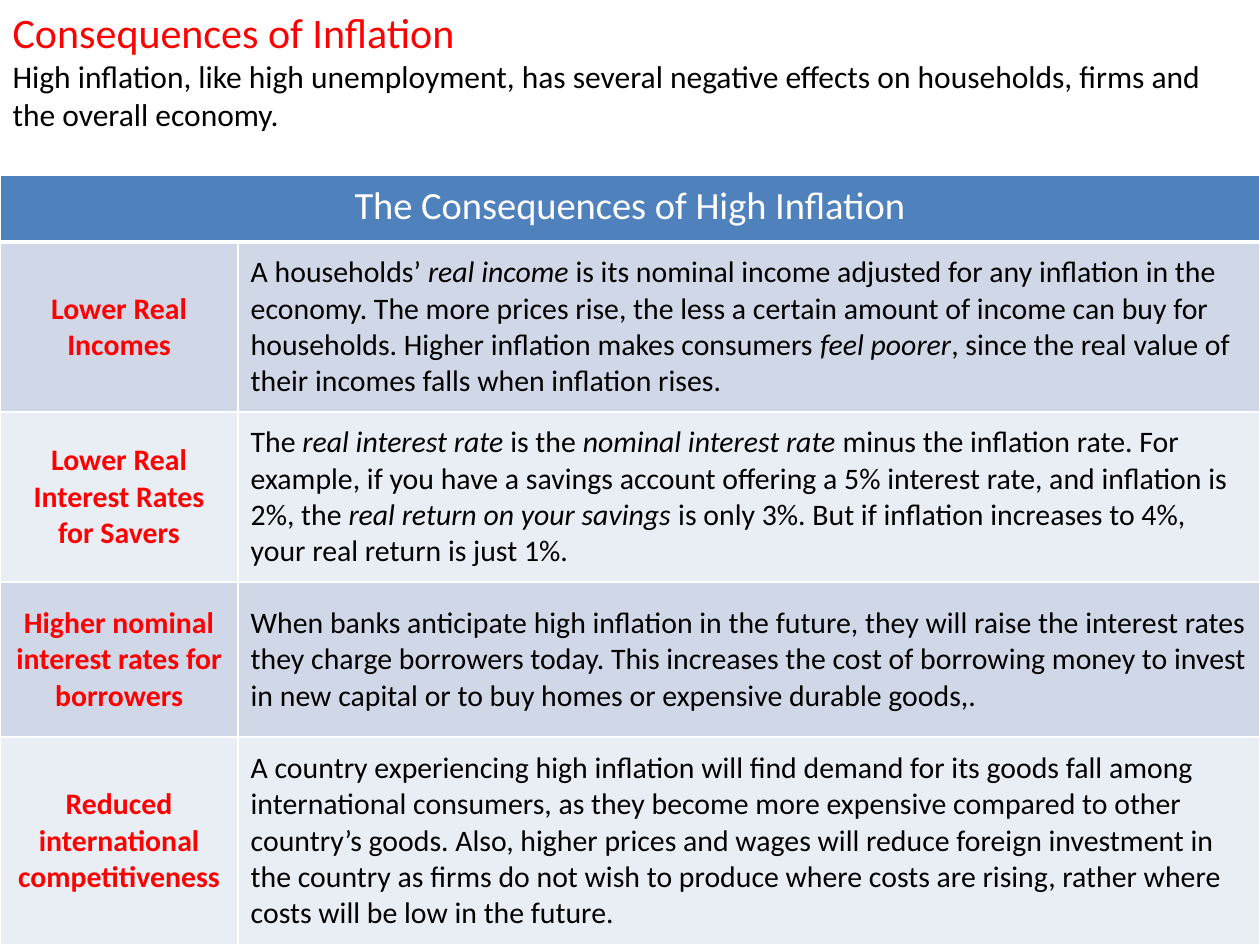
from dataclasses import dataclass

from lxml.etree import SubElement as Sub
from pptx import Presentation
from pptx.dml.color import RGBColor
from pptx.enum.text import MSO_ANCHOR as Anchor, MSO_AUTO_SIZE as Fit, PP_ALIGN as Align
from pptx.oxml.ns import qn
from pptx.util import Inches, Pt

RED = RGBColor(0xFF, 0x00, 0x00)
BLACK = RGBColor(0x00, 0x00, 0x00)
WHITE = RGBColor(0xFF, 0xFF, 0xFF)
BLUE = RGBColor(0x4F, 0x81, 0xBD)
BANDS = (RGBColor(0xD0, 0xD8, 0xE8), RGBColor(0xE9, 0xED, 0xF4))
FONT = "Calibri"
WIDTHS = (1.89, 8.11)
HEAD = 0.53


@dataclass(frozen=True)
class Effect:
    name: str
    texts: tuple[str, ...]
    height: float


@dataclass(frozen=True)
class Style:
    size: float
    color: RGBColor
    align: Align = Align.LEFT
    bold: bool = False


TITLE = Style(24, RED)
INTRO = Style(18, BLACK)
HEADER = Style(22, WHITE, Align.CENTER)
LABEL = Style(17, RED, Align.CENTER, True)
BODY = Style(17, BLACK)

EFFECTS = (
    Effect("Lower Real Incomes", (
        "A households’ ", "real income",
        " is its nominal income adjusted for any inflation in the economy. "
        "The more prices rise, the less a certain amount of income can buy for "
        "households. Higher inflation makes consumers ",
        "feel poorer",
        ", since the real value of their incomes falls when inflation rises."), 1.35),
    Effect("Lower Real Interest Rates for Savers", (
        "The ", "real interest rate", " is the ", "nominal interest rate ",
        "minus the inflation rate. For example, if you have a savings account "
        "offering a 5% interest rate, and inflation is 2%, the ",
        "real return on your savings ",
        "is only 3%. But if inflation increases to 4%, your real return is just 1%."), 1.35),
    Effect("Higher nominal interest rates for borrowers", (
        "When banks anticipate high inflation in the future, they will raise the "
        "interest rates they charge borrowers today. This increases the cost of "
        "borrowing money to invest in new capital or to buy homes or expensive "
        "durable goods,.",), 1.23),
    Effect("Reduced international competitiveness", (
        "A country experiencing high inflation will find demand for its goods fall "
        "among international consumers, as they become more expensive compared to "
        "other country’s goods. Also, higher prices and wages will reduce foreign "
        "investment in the country as firms do not wish to produce where costs are "
        "rising, rather where costs will be low in the future.",), 1.65),
)


def write(para, texts: tuple[str, ...], style: Style) -> None:
    para.alignment = style.align
    para.space_before = Pt(0)
    for i, text in enumerate(texts):
        run = para.add_run()
        run.text = text
        font = run.font
        font.name, font.size, font.bold = FONT, Pt(style.size), style.bold
        font.italic = i % 2 == 1
        font.color.rgb = style.color


def edge(cell, top: float, base: float) -> None:
    props = cell._tc.get_or_add_tcPr()
    sides = (("lnL", 1), ("lnR", 1), ("lnT", top), ("lnB", base))
    for i, (side, width) in enumerate(sides):
        line = Sub(props, qn(f"a:{side}"), w=str(Pt(width)))
        fill = Sub(line, qn("a:solidFill"))
        Sub(fill, qn("a:srgbClr"), val=str(WHITE))
        props.insert(i, line)


def paint(cell, fill: RGBColor, anchor: Anchor, top: float = 1, base: float = 1) -> None:
    cell.fill.solid()
    cell.fill.fore_color.rgb = fill
    cell.vertical_anchor = anchor
    cell.margin_left = cell.margin_right = Inches(0.1)
    cell.margin_top = cell.margin_bottom = Inches(0.06)
    edge(cell, top, base)


def add_title(slide) -> None:
    title = slide.shapes.title
    title.left, title.top = Inches(0), Inches(0)
    title.width, title.height = Inches(10), Inches(1.11)
    frame = title.text_frame
    frame.word_wrap = True
    frame.auto_size = Fit.SHAPE_TO_FIT_TEXT
    frame.vertical_anchor = Anchor.TOP
    write(frame.paragraphs[0], ("Consequences of Inflation",), TITLE)
    write(frame.add_paragraph(), (
        "High inflation, like high unemployment, has several negative effects on "
        "households, firms and the overall economy.",), INTRO)


def add_grid(slide) -> None:
    highs = (HEAD, *(e.height for e in EFFECTS))
    grid = slide.shapes.add_table(
        len(highs), len(WIDTHS), Inches(0), Inches(1.39),
        Inches(sum(WIDTHS)), Inches(sum(highs))).table
    for col, width in zip(grid.columns, WIDTHS):
        col.width = Inches(width)
    for row, high in zip(grid.rows, highs):
        row.height = Inches(high)

    for cell in grid.rows[0].cells:
        paint(cell, BLUE, Anchor.TOP, base=3)
    head = grid.cell(0, 0)
    head.merge(grid.cell(0, 1))
    write(head.text_frame.paragraphs[0], ("The Consequences of High Inflation",), HEADER)

    for i, effect in enumerate(EFFECTS):
        pairs = (((effect.name,), LABEL), (effect.texts, BODY))
        for j, (texts, style) in enumerate(pairs):
            cell = grid.cell(i + 1, j)
            paint(cell, BANDS[i % 2], Anchor.MIDDLE, top=3 if i == 0 else 1)
            write(cell.text_frame.paragraphs[0], texts, style)


def main() -> None:
    deck = Presentation()
    deck.slide_width, deck.slide_height = Inches(10), Inches(7.5)
    slide = deck.slides.add_slide(deck.slide_layouts[5])
    add_title(slide)
    add_grid(slide)
    deck.save("out.pptx")


if __name__ == "__main__":
    main()
